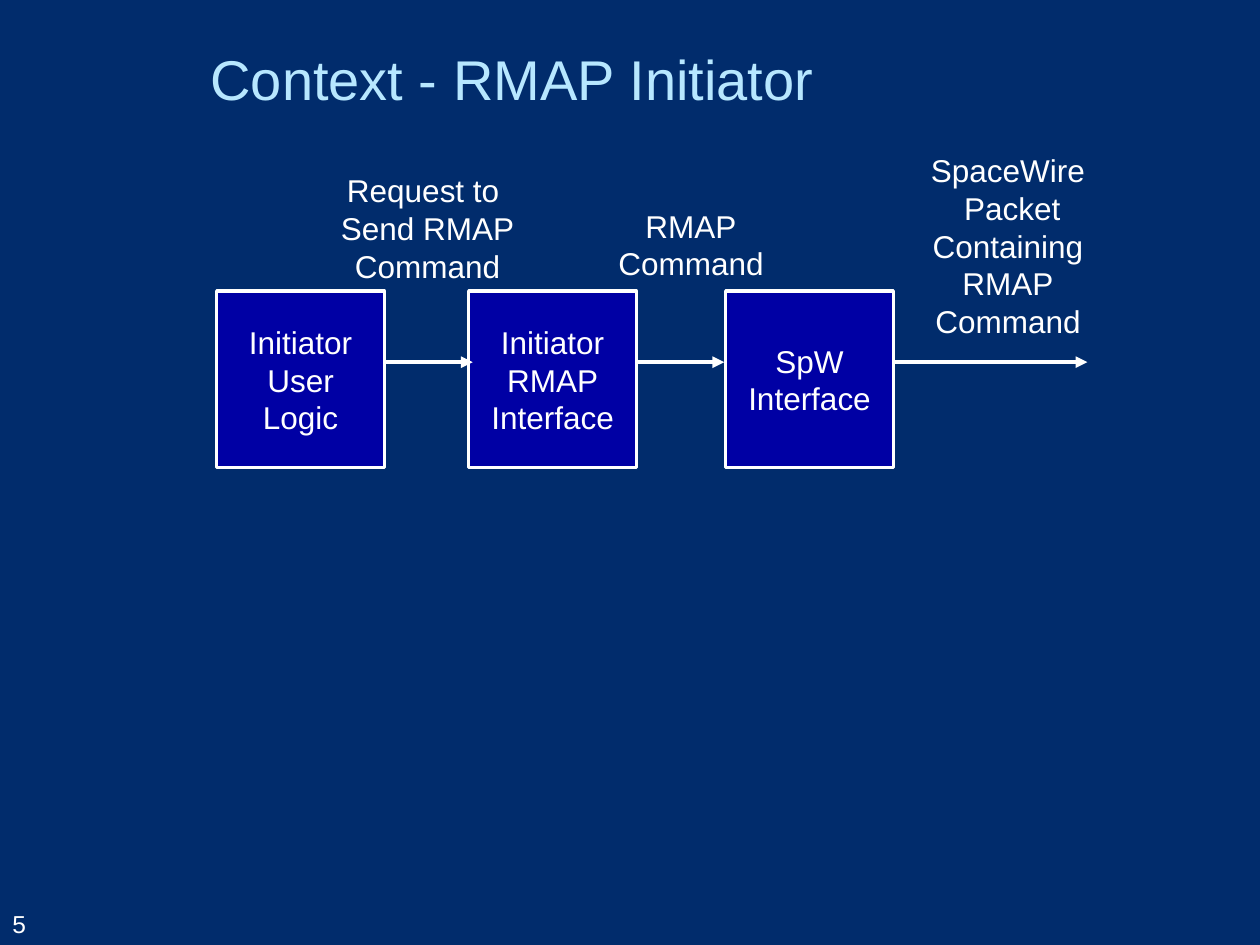
import pptx
import pptx.dml.color
import pptx.enum.shapes
import pptx.enum.text
import pptx.oxml.ns
import pptx.util
from lxml import etree
from pptx.util import Cm

COLORS = {"background": "012C6C", "title": "B7E7FF", "box": "0000A4", "white": "FFFFFF"}
ANCHOR = pptx.enum.text.MSO_ANCHOR
ALIGN = pptx.enum.text.PP_ALIGN


def rgb(name):
    return pptx.dml.color.RGBColor.from_string(COLORS[name])


class Diagram:
    font = "Arial"

    def __init__(self, prs):
        self.s = prs.slides.add_slide(prs.slide_layouts[5])
        fill = self.s.background.fill
        fill.solid()
        fill.fore_color.rgb = rgb("background")

    def set_text(self, sp, lines, size=18, color="white", align=ALIGN.CENTER,
                 anchor=ANCHOR.TOP, wrap=True):
        tf = sp.text_frame
        tf.word_wrap = wrap
        tf.auto_size = pptx.enum.text.MSO_AUTO_SIZE.NONE
        tf.vertical_anchor = anchor
        for i, line in enumerate(lines):
            p = tf.add_paragraph() if i else tf.paragraphs[0]
            p.alignment = align
            r = p.add_run()
            r.text = line
            r.font.name = self.font
            r.font.size = pptx.util.Pt(size)
            r.font.color.rgb = rgb(color)

    def title(self, text, x, y, w, h):
        sp = self.s.shapes.title
        sp.left, sp.top, sp.width, sp.height = Cm(x), Cm(y), Cm(w), Cm(h)
        self.set_text(sp, [text], 32, "title", ALIGN.LEFT, ANCHOR.MIDDLE)

    def text(self, lines, x, y, w, h, **style):
        sp = self.s.shapes.add_textbox(Cm(x), Cm(y), Cm(w), Cm(h))
        self.set_text(sp, lines, **style)

    def box(self, lines, x, y, w, h):
        sp = self.s.shapes.add_shape(pptx.enum.shapes.MSO_SHAPE.RECTANGLE,
                                     Cm(x), Cm(y), Cm(w), Cm(h))
        sp.shadow.inherit = False
        sp.fill.solid()
        sp.fill.fore_color.rgb = rgb("box")
        sp.line.color.rgb = rgb("white")
        sp.line.width = pptx.util.Pt(2)
        self.set_text(sp, lines, anchor=ANCHOR.MIDDLE)

    def arrow(self, x1, x2, y):
        c = self.s.shapes.add_connector(pptx.enum.shapes.MSO_CONNECTOR.STRAIGHT,
                                        Cm(x1), Cm(y), Cm(x2), Cm(y))
        c.line.color.rgb = rgb("white")
        c.line.width = pptx.util.Pt(2.25)
        qn = pptx.oxml.ns.qn
        etree.SubElement(c.get_or_add_ln(), qn("a:tailEnd"), type="triangle")
        etree.SubElement(c.element.spPr, qn("a:effectLst"))


def main():
    prs = pptx.Presentation()
    prs.slide_width, prs.slide_height = Cm(25.4), Cm(19.05)
    d = Diagram(prs)
    d.title("Context - RMAP Initiator", 3.99, 0.43, 21.41, 2.29)
    d.text(["5"], 0, 17.73, 2.69, 1.32, size=14, align=ALIGN.LEFT, anchor=ANCHOR.BOTTOM)

    box_top, box_w, box_h = 5.87, 3.38, 3.56
    blocks = [
        (4.37, ["Initiator", "User Logic"]),
        (9.45, ["Initiator", "RMAP", "Interface"]),
        (14.63, ["SpW", "Interface"]),
    ]
    for x, lines in blocks:
        d.box(lines, x, box_top, box_w, box_h)

    # Each signal leaves the right edge of its block
    signals = [
        (9.53, (6.6, 3.33, 4.04, 2.57), ["Request to ", "Send RMAP", "Command"]),
        (14.6, (12.19, 4.04, 3.48, 1.8), ["RMAP", "Command"]),
        (21.92, (18.49, 2.92, 3.66, 4.11),
         ["SpaceWire", " Packet", "Containing", "RMAP", "Command"]),
    ]
    for (x, _), (end, place, lines) in zip(blocks, signals):
        d.arrow(x + box_w, end, 7.3)
        d.text(lines, *place, wrap=False)

    prs.save("out.pptx")


if __name__ == "__main__":
    main()
